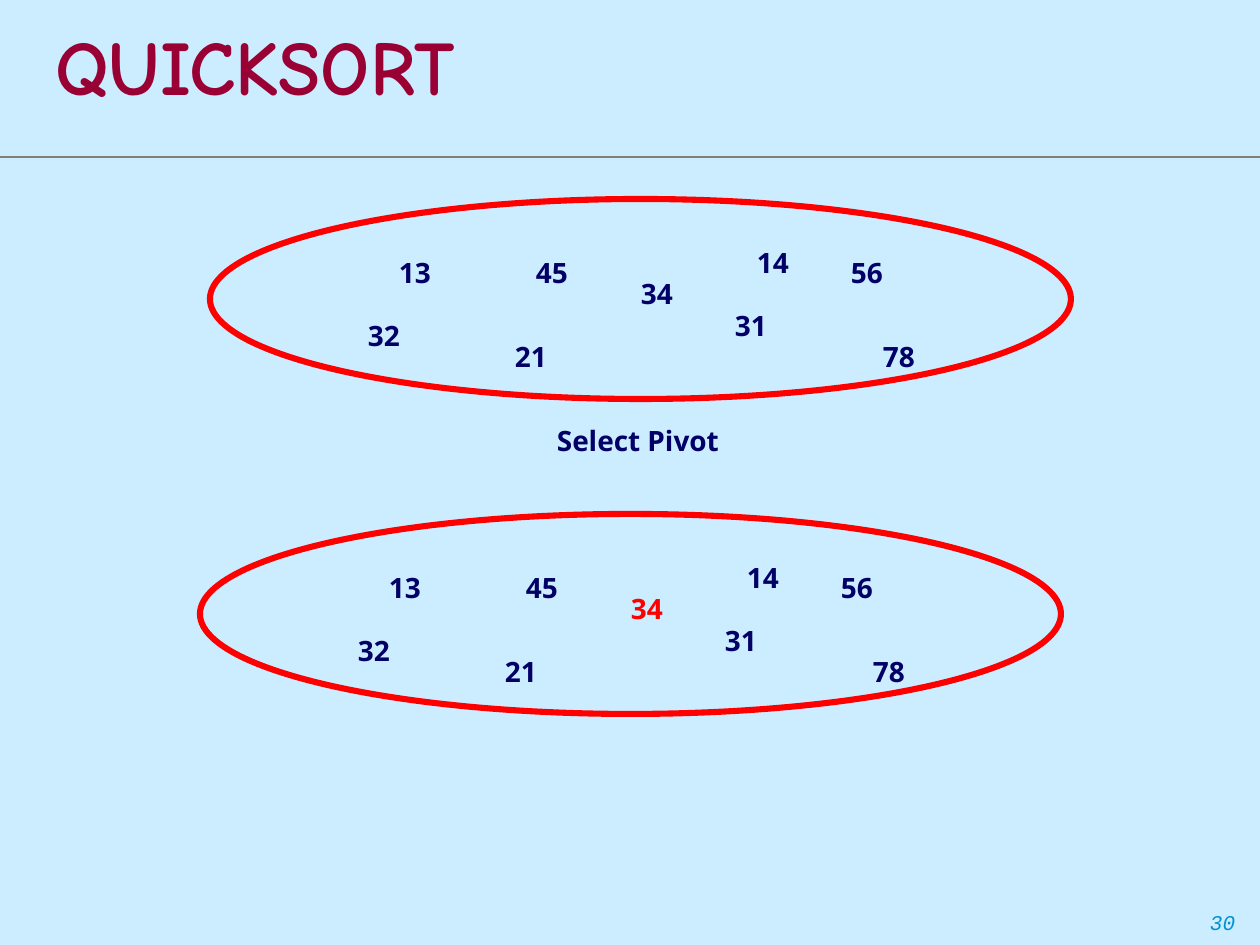
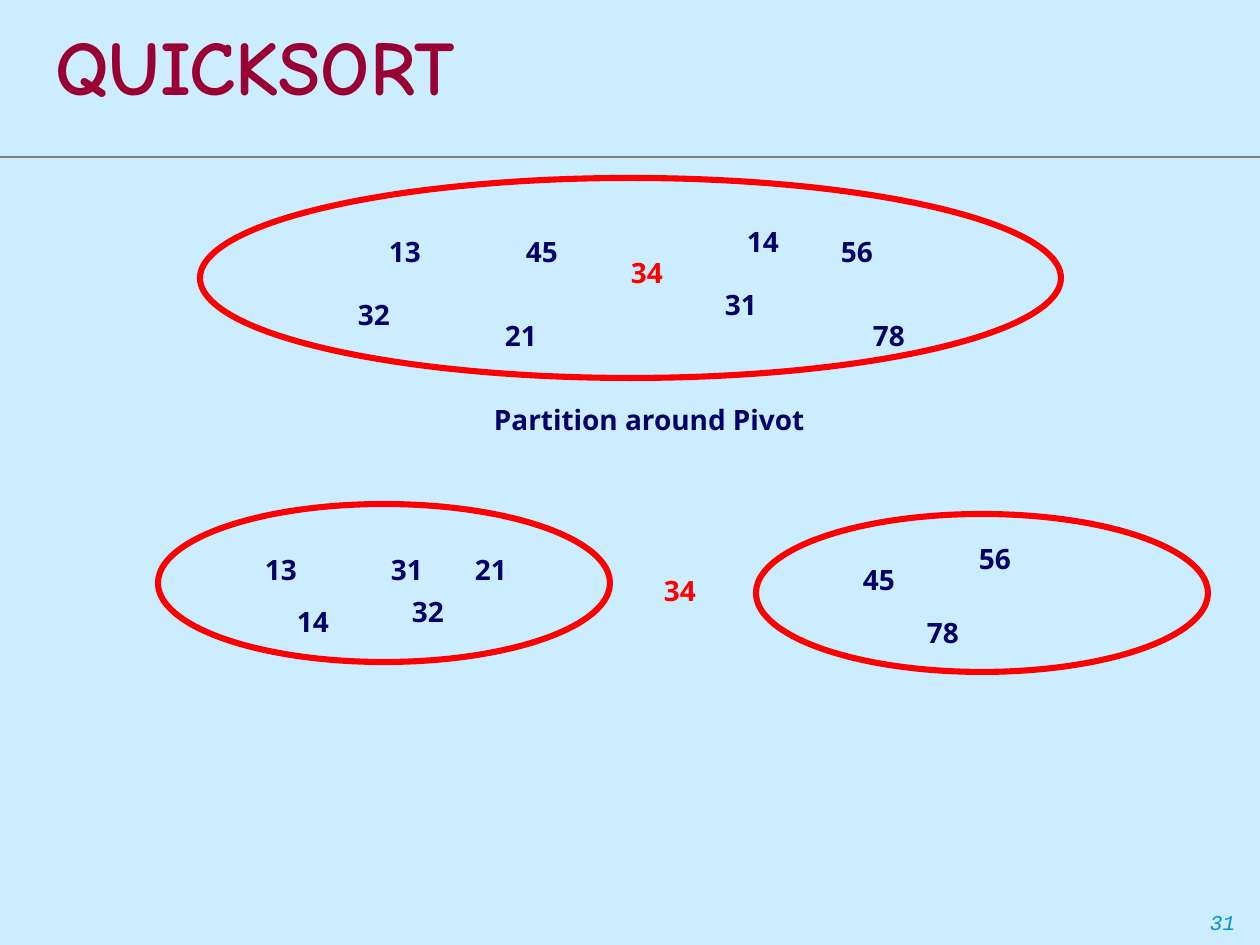
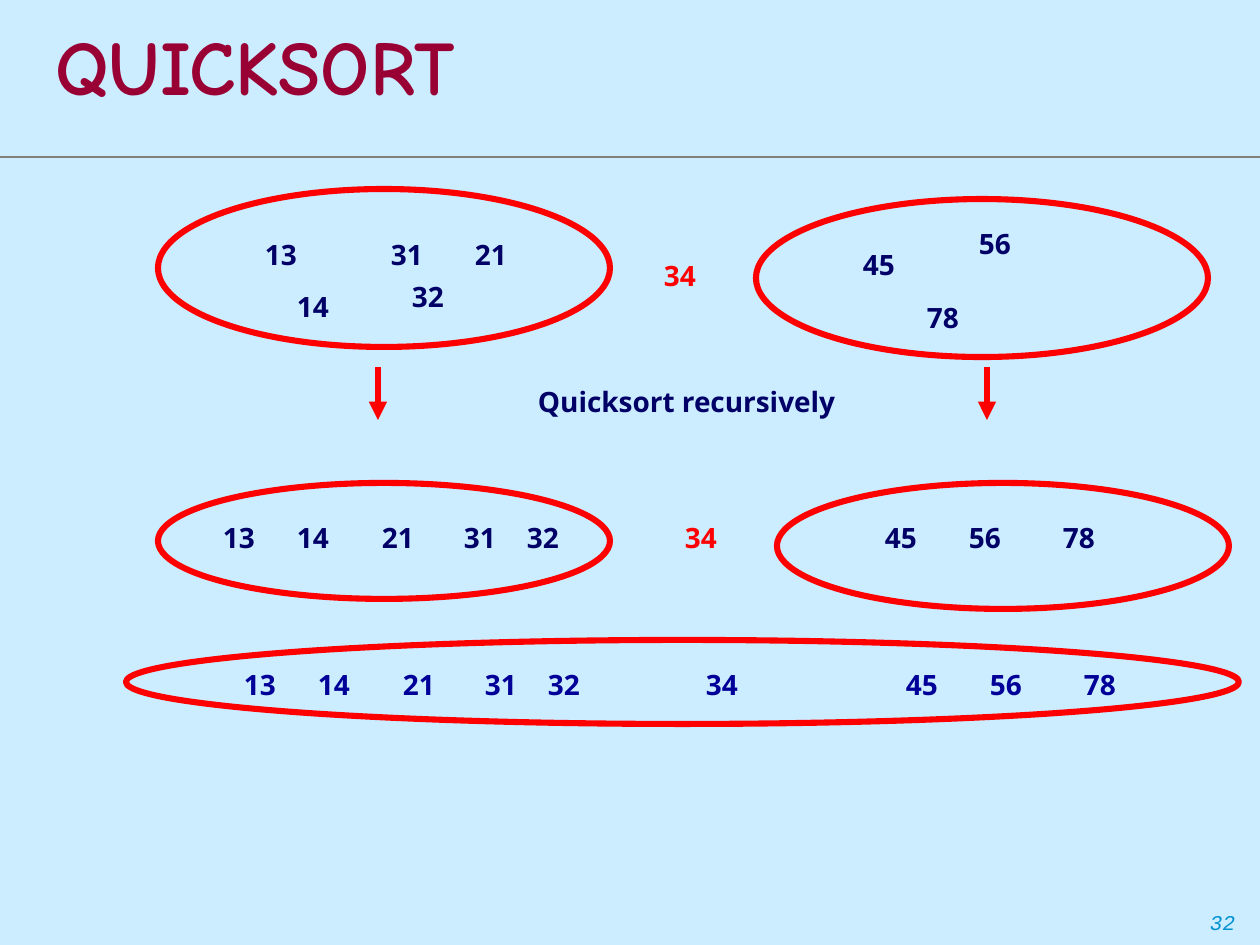
from pptx import Presentation
from pptx import util as u
from pptx.dml.color import RGBColor
from pptx.enum import shapes, text
from pptx.oxml.ns import qn
from lxml import etree

PX = 914400 // 126
WIDTH, HEIGHT = 1260, 945

SKY = RGBColor(0xCC, 0xEC, 0xFF)
MAROON = RGBColor(0x99, 0x00, 0x33)
NAVY = RGBColor(0x00, 0x00, 0x66)
BLUE = RGBColor(0x00, 0x00, 0x99)
RED = RGBColor(0xFF, 0x00, 0x00)
GRAY = RGBColor(0x82, 0x7F, 0x77)
CYAN = RGBColor(0x00, 0x93, 0xD0)

UNSORTED = [("13", 176, 50), ("21", 292, 134), ("34", 418, 71),
            ("56", 628, 50), ("32", 145, 113), ("31", 512, 103),
            ("45", 313, 50), ("78", 660, 134), ("14", 534, 40)]
PARTITIONED = [("13", 252, 42), ("14", 284, 94), ("21", 462, 42),
               ("32", 399, 84), ("31", 378, 42), ("34", 651, 63),
               ("45", 850, 52), ("56", 966, 31), ("78", 914, 105)]
SORTED = [("13", 210, 0), ("14", 284, 0), ("21", 369, 0),
          ("31", 451, 0), ("32", 514, 0), ("34", 672, 0),
          ("45", 872, 0), ("56", 956, 0), ("78", 1050, 0)]


def emu(*lengths):
    return [u.Emu(n * PX) for n in lengths]


def add_text(s, content, x, y, w, h, *, font="Open Sans", size=16, color=NAVY,
             bold=True, italic=False, wrap=False, inset=13, spacing=None,
             anchor=text.MSO_ANCHOR.TOP):
    tf = s.shapes.add_textbox(*emu(x, y, w, h)).text_frame
    tf.word_wrap = wrap
    tf.vertical_anchor = anchor
    tf.margin_left = u.Emu(inset * PX)
    p = tf.paragraphs[0]
    if spacing:
        p.line_spacing = spacing
    r = p.add_run()
    r.text = content
    r.font.name = font
    r.font.size = u.Pt(size)
    r.font.bold = bold
    r.font.italic = italic
    r.font.color.rgb = color


def add_line(s, x1, y1, x2, y2, color, width, arrow=False):
    sp = s.shapes.add_connector(shapes.MSO_CONNECTOR.STRAIGHT, *emu(x1, y1, x2, y2))
    sp.line.color.rgb = color
    sp.line.width = u.Pt(width)
    if arrow:
        etree.SubElement(sp.line._get_or_add_ln(), qn("a:tailEnd"), type="triangle")
    etree.SubElement(sp._element.spPr, qn("a:effectLst"))


def add_ellipse(s, x, y, w, h):
    sp = s.shapes.add_shape(shapes.MSO_SHAPE.OVAL, *emu(x, y, w, h))
    sp.shadow.inherit = False
    sp.fill.background()
    sp.line.color.rgb = RED
    sp.line.width = u.Pt(3.5)


def add_numbers(s, numbers, x, y, color=NAVY, pivot_color=RED):
    for number, dx, dy in numbers:
        add_text(s, number, x + dx, y + dy, 62, 46,
                 color=pivot_color if number == "34" else color)


def add_unsorted(s, x, y, pivot_color=RED):
    add_ellipse(s, x, y, 861, 200)
    add_numbers(s, UNSORTED, x, y, pivot_color=pivot_color)


def add_partitions(s, y):
    add_ellipse(s, 158, y, 452, 158)
    add_ellipse(s, 756, y + 10, 452, 158)
    add_numbers(s, PARTITIONED, 0, y)


def add_slide(prs, number):
    s = prs.slides.add_slide(prs.slide_layouts[6])
    s.background.fill.solid()
    s.background.fill.fore_color.rgb = SKY
    add_text(s, str(number), 0, 903, WIDTH, 38, font="Courier New", size=12,
             color=CYAN, bold=False, italic=True, wrap=True, inset=1210,
             anchor=text.MSO_ANCHOR.BOTTOM)
    add_line(s, 0, 157, WIDTH, 157, GRAY, 0.75)
    add_text(s, "QUICKSORT", 42, 9, 1218, 126, font="Comic Neue", size=44,
             color=MAROON, wrap=True, spacing=0.86,
             anchor=text.MSO_ANCHOR.MIDDLE)
    return s


def select_pivot(prs):
    s = add_slide(prs, 30)
    add_unsorted(s, 210, 199, pivot_color=NAVY)
    add_text(s, "Select Pivot", 544, 417, 192, 46)
    add_unsorted(s, 200, 514)


def partition(prs):
    s = add_slide(prs, 31)
    add_unsorted(s, 200, 178)
    add_text(s, "Partition around Pivot", 481, 396, 341, 46)
    add_partitions(s, 504)


def recurse(prs):
    s = add_slide(prs, 32)
    add_partitions(s, 189)
    for x in (378, 987):
        add_line(s, x, 367, x, 420, RED, 3.5, arrow=True)
    add_text(s, "Quicksort recursively", 525, 378, 334, 46)
    add_ellipse(s, 158, 483, 452, 116)
    add_ellipse(s, 777, 483, 452, 126)
    add_numbers(s, SORTED, 0, 514)
    add_numbers(s, SORTED, 21, 661, color=BLUE, pivot_color=BLUE)
    add_ellipse(s, 126, 640, 1113, 84)


def main():
    prs = Presentation()
    prs.slide_width, prs.slide_height = u.Inches(10), u.Inches(7.5)
    select_pivot(prs)
    partition(prs)
    recurse(prs)
    prs.save("out.pptx")


if __name__ == "__main__":
    main()
